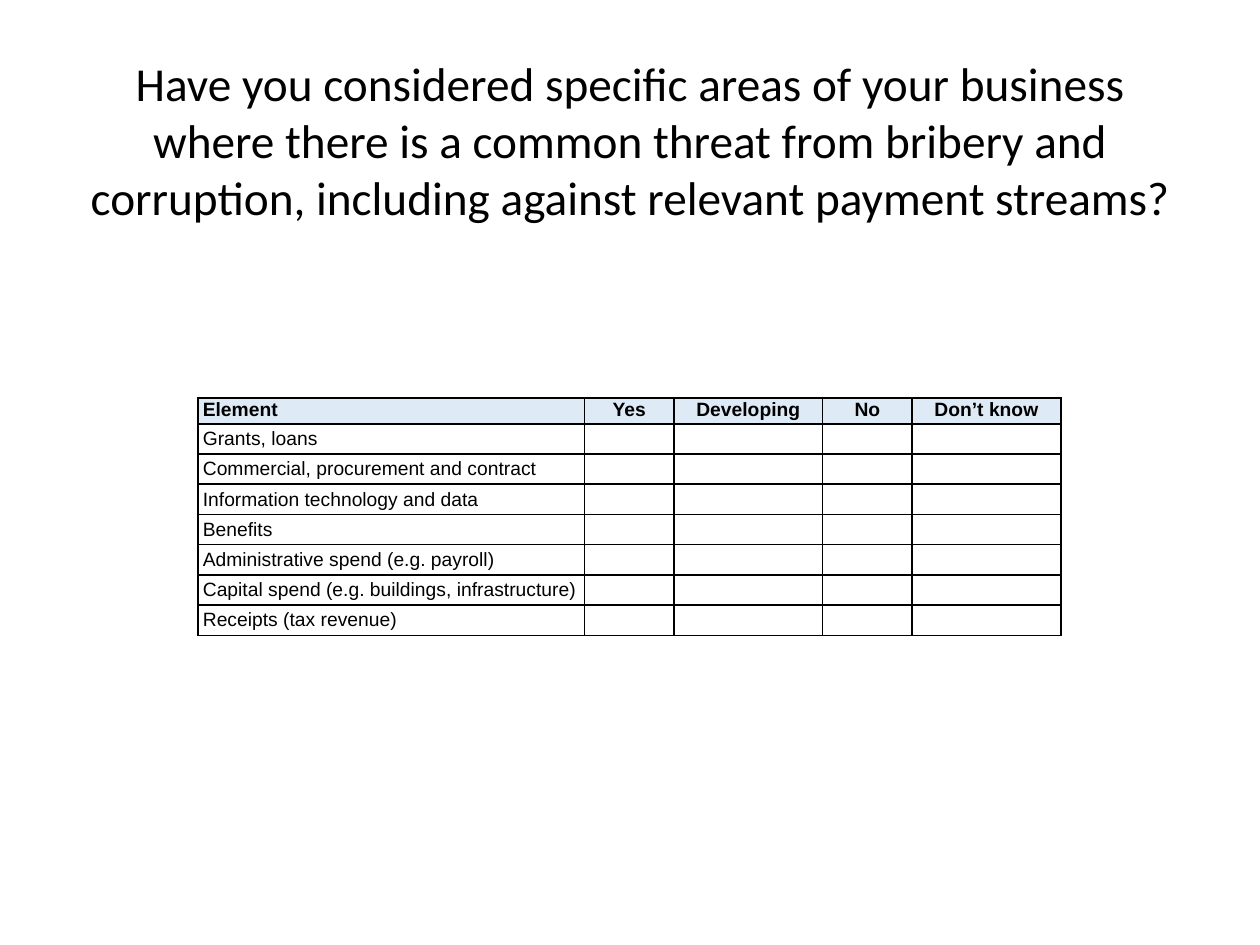
from lxml.etree import SubElement as Sub
from pptx import Presentation
from pptx.dml.color import RGBColor as RGB
from pptx.enum.text import MSO_ANCHOR as Anchor, PP_ALIGN as Align
from pptx.oxml.ns import qn
from pptx.util import Inches, Pt

BLACK = RGB(0, 0, 0)
PALE = RGB(0xDE, 0xEA, 0xF6)

TITLE = ("Have you considered specific areas of your business where there is "
         "a common threat from bribery and corruption, including against "
         "relevant payment streams?")
HEADS = ["Element", "Yes", "Developing", "No", "Don’t know"]
AREAS = [
    "Grants, loans",
    "Commercial, procurement and contract",
    "Information technology and data",
    "Benefits",
    "Administrative spend (e.g. payroll)",
    "Capital spend (e.g. buildings, infrastructure)",
    "Receipts (tax revenue)",
]
WIDTHS = [3.07, 0.71, 1.18, 0.71, 1.18]
HEAD_H, ROW_H = 0.2, 0.24


def assign(item, values):
    for name, value in values.items():
        setattr(item, name, value)


class Page:
    title_font = {"name": "Calibri", "size": Pt(27), "bold": False}
    cell_font = {"name": "Arial", "size": Pt(11), "bold": False}
    head_font = {**cell_font, "bold": True}
    title_box = {"word_wrap": True, "vertical_anchor": Anchor.MIDDLE,
                 "margin_bottom": Inches(0.71)}
    cell_box = {"margin_left": Inches(0.04), "margin_right": Inches(0.04),
                "margin_top": Inches(0.01), "margin_bottom": Inches(0.01)}

    def __init__(self, deck):
        self.slide = deck.slides.add_slide(deck.slide_layouts[6])

    def label(self, para, text, font, align):
        para.alignment = align
        if text:
            run = para.add_run()
            run.text = text
            assign(run.font, font)
            run.font.color.rgb = BLACK
        else:
            # An empty line needs its own size, or it stretches the row.
            Sub(para._p, qn("a:endParaRPr"), sz=str(int(font["size"].pt * 100)))

    def title(self, text, left, top, width, height):
        box = self.slide.shapes.add_textbox(
            Inches(left), Inches(top), Inches(width), Inches(height))
        assign(box.text_frame, self.title_box)
        self.label(box.text_frame.paragraphs[0], text, self.title_font,
                   Align.CENTER)

    def border(self, cell):
        props = cell._tc.get_or_add_tcPr()
        for place, side in enumerate(("lnL", "lnR", "lnT", "lnB")):
            line = Sub(props, qn(f"a:{side}"), w=str(Pt(1)))
            fill = Sub(line, qn("a:solidFill"))
            Sub(fill, qn("a:srgbClr"), val=str(BLACK))
            props.insert(place, line)

    def cell(self, cell, text, head, align):
        assign(cell, self.cell_box)
        cell.vertical_anchor = Anchor.TOP if head else Anchor.MIDDLE
        if head:
            cell.fill.solid()
            cell.fill.fore_color.rgb = PALE
        else:
            cell.fill.background()
        self.border(cell)
        self.label(cell.text_frame.paragraphs[0], text,
                   self.head_font if head else self.cell_font, align)

    def table(self, rows, left, top):
        highs = [HEAD_H] + [ROW_H] * (len(rows) - 1)
        table = self.slide.shapes.add_table(
            len(rows), len(WIDTHS), Inches(left), Inches(top),
            Inches(sum(WIDTHS)), Inches(sum(highs))).table
        assign(table, {"first_row": False, "horz_banding": False})
        for col, width in zip(table.columns, WIDTHS):
            col.width = Inches(width)
        for r, (texts, high) in enumerate(zip(rows, highs)):
            table.rows[r].height = Inches(high)
            for c, text in enumerate(texts):
                self.cell(table.cell(r, c), text, r == 0,
                          Align.CENTER if c else Align.LEFT)


def main():
    deck = Presentation()
    assign(deck, {"slide_width": Inches(10), "slide_height": Inches(7.5)})
    page = Page(deck)
    page.title(TITLE, 0.5, 0.3, 9, 2.28)
    blanks = [""] * (len(HEADS) - 1)
    page.table([HEADS] + [[area] + blanks for area in AREAS], 1.57, 3.16)
    deck.save("out.pptx")


if __name__ == "__main__":
    main()
